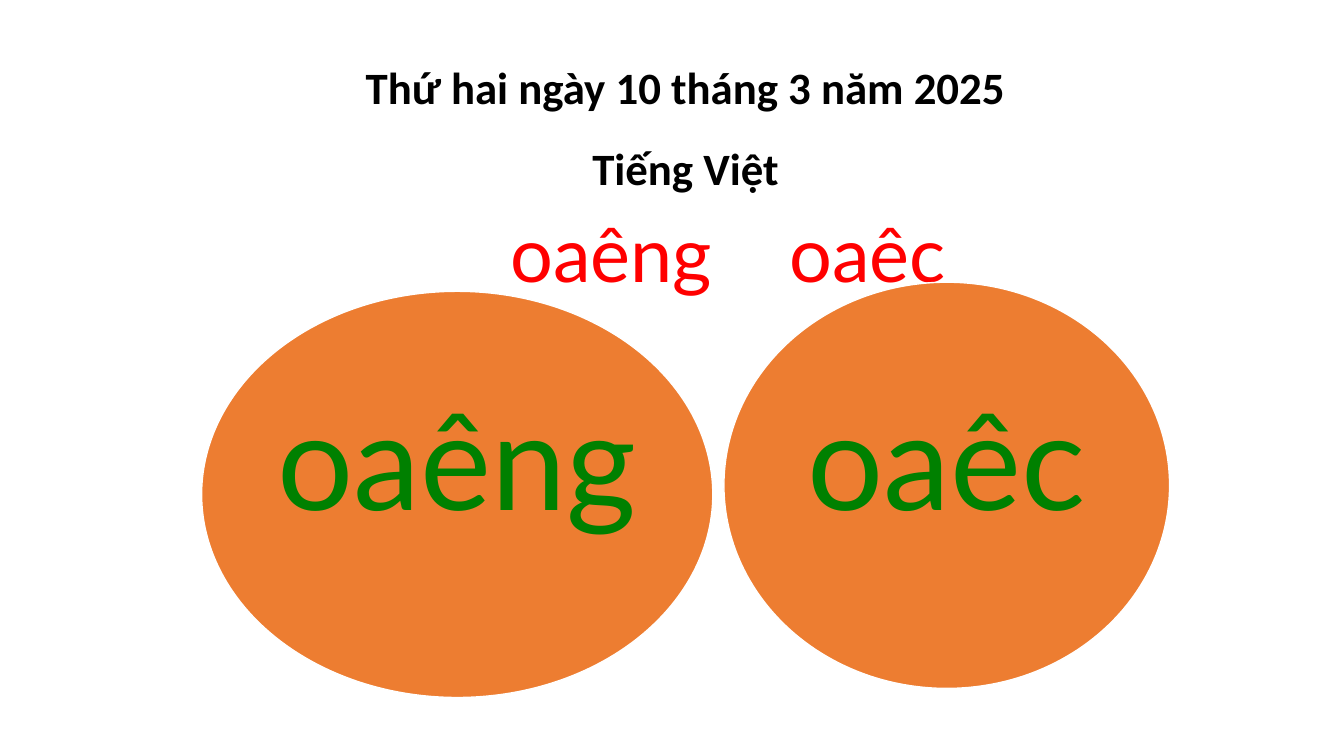
import pptx
import pptx.dml.color
import pptx.enum.shapes
import pptx.enum.text
import pptx.util
from lxml import etree

Inches = pptx.util.Inches
RGBColor = pptx.dml.color.RGBColor
ALIGN = pptx.enum.text.PP_ALIGN

BLACK = RGBColor(0, 0, 0)
RED = RGBColor(255, 0, 0)
GREEN = RGBColor(0, 128, 0)
ORANGE = RGBColor(0xED, 0x7D, 0x31)
WHITE = RGBColor(255, 255, 255)

HEADING = ["Thứ hai ngày 10 tháng 3 năm 2025", "Tiếng Việt"]
RHYMES = ["oaêng", "oaêc"]
ELLIPSES = [(2, 2.89, 5.07, 4.03), (7.18, 2.8, 4.42, 4.03)]
LABELS = [(2.33, 3.68, 4.4, 1.72), (7.47, 3.68, 3.83, 1.72)]
LESSON_INSET = 0.64
LESSON_TAB = 2.77


def add_text(shapes, box, lines, font_name, size, color,
             bold=False, spacing=1.0, align=ALIGN.CENTER, tab=None):
    shape = shapes.add_textbox(*map(Inches, box))
    frame = shape.text_frame
    frame.word_wrap = True
    frame.text = "\n".join(lines)
    for paragraph in frame.paragraphs:
        paragraph.alignment = align
        paragraph.line_spacing = spacing
        if tab:
            properties = paragraph._p.get_or_add_pPr()
            tabs = etree.SubElement(properties, pptx.oxml.ns.qn("a:tabLst"))
            etree.SubElement(tabs, pptx.oxml.ns.qn("a:tab"),
                             pos=str(Inches(tab)), algn="l")
        paragraph.font.name = font_name
        paragraph.font.size = pptx.util.Pt(size)
        paragraph.font.bold = bold
        paragraph.font.color.rgb = color
    return shape


def add_rhyme(slide, rhyme, ellipse_box, label_box):
    group = slide.shapes.add_group_shape()
    ellipse = group.shapes.add_shape(
        pptx.enum.shapes.MSO_SHAPE.OVAL, *map(Inches, ellipse_box))
    ellipse.shadow.inherit = False
    ellipse.fill.solid()
    ellipse.fill.fore_color.rgb = ORANGE
    ellipse.line.color.rgb = WHITE
    ellipse.line.width = pptx.util.Pt(1)
    add_text(group.shapes, label_box, [rhyme], "Lato", 96, GREEN)


def main():
    presentation = pptx.Presentation()
    presentation.slide_width = Inches(13.33)
    presentation.slide_height = Inches(7.5)
    slide = presentation.slides.add_slide(presentation.slide_layouts[6])

    add_text(slide.shapes, (2, 0.28, 9.6, 2), HEADING, "Calibri", 32, BLACK,
             bold=True, spacing=1.5)
    lesson = add_text(slide.shapes, (4.42, 1.55, 5.64, 1.29),
                      ["\t".join(RHYMES)], "Lato", 54, RED,
                      spacing=1.5, align=ALIGN.LEFT, tab=LESSON_TAB)
    lesson.text_frame.margin_left = Inches(LESSON_INSET)
    for rhyme, ellipse_box, label_box in zip(RHYMES, ELLIPSES, LABELS):
        add_rhyme(slide, rhyme, ellipse_box, label_box)

    presentation.save("out.pptx")


if __name__ == "__main__":
    main()
